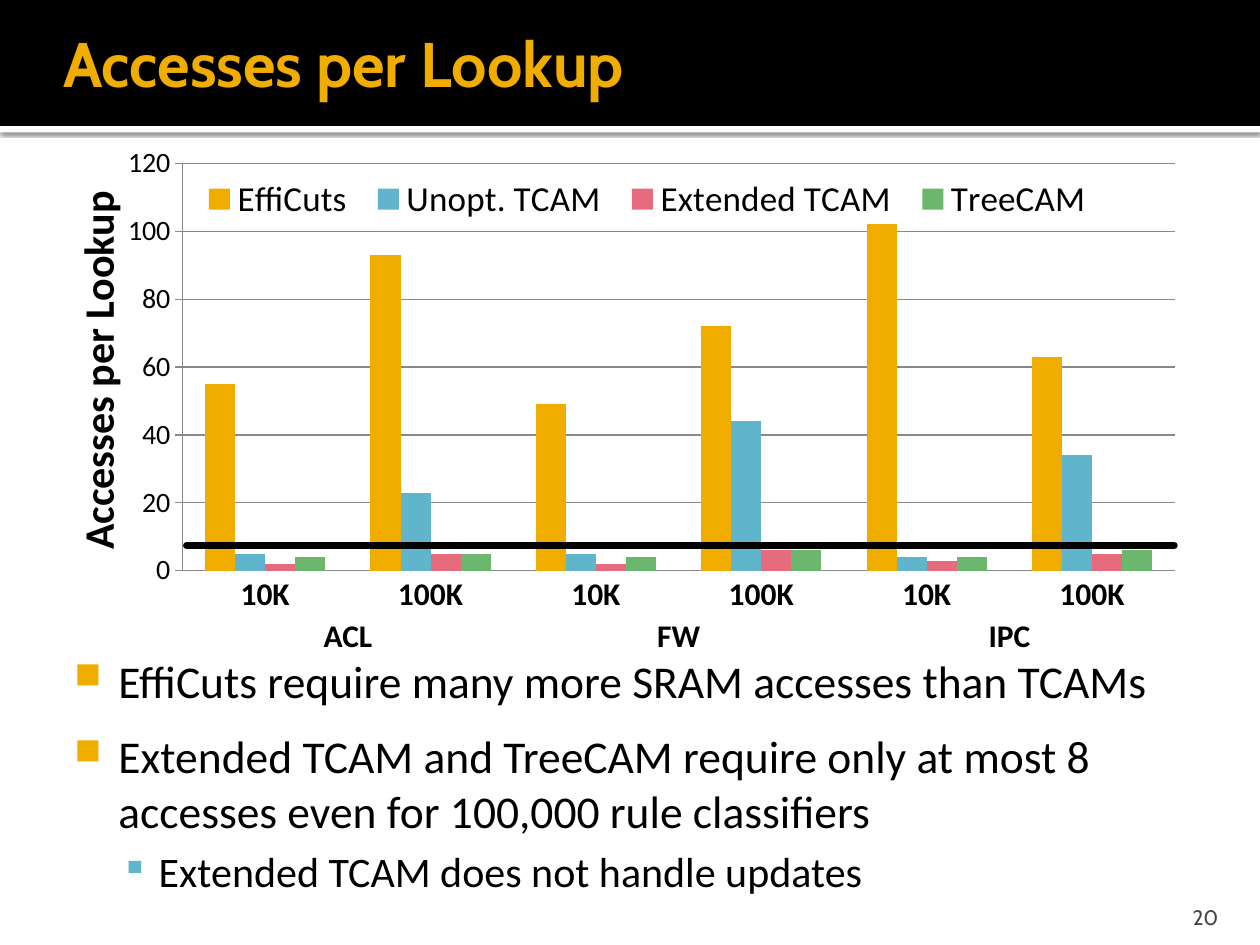
from lxml import etree
from pptx import Presentation
from pptx.chart.data import CategoryChartData
from pptx.dml.color import RGBColor
from pptx.enum import chart as ch, shapes, text
from pptx.oxml import parse_xml
from pptx.oxml.ns import nsdecls, qn
from pptx.util import Pt


def color(hex_string):
    return RGBColor.from_string(hex_string)


def place(parent, index, **layout):
    old = parent.find(qn("c:layout"))
    if old is not None:
        parent.remove(old)
    parts = "".join(f'<c:{key} val="{value}"/>' for key, value in layout.items())
    parent.insert(index, parse_xml(
        f'<c:layout {nsdecls("c")}><c:manualLayout>{parts}</c:manualLayout></c:layout>'))


prs = Presentation()
prs.slide_width, prs.slide_height = Pt(720), Pt(540)
slide = prs.slides.add_slide(prs.slide_layouts[5])

for top, height, fill in [(72, 3.6, "FFFFFF"), (0, 72, "000000")]:
    band = slide.shapes.add_shape(
        shapes.MSO_SHAPE.RECTANGLE, Pt(0), Pt(top), Pt(720), Pt(height))
    band.shadow.inherit = False
    band.fill.solid()
    band.fill.fore_color.rgb = color(fill)
    band.line.fill.background()
    if fill == "FFFFFF":
        band._element.spPr.find(qn("a:effectLst")).append(parse_xml(
            f'<a:outerShdw {nsdecls("a")} blurRad="{Pt(2.5)}" dist="{Pt(0.8)}" dir="5400000">'
            '<a:srgbClr val="000000"><a:alpha val="60000"/></a:srgbClr></a:outerShdw>'))

title = slide.shapes.title
slide.shapes._spTree.append(title._element)
title.left, title.top, title.width, title.height = Pt(28.8), Pt(5.8), Pt(667.4), Pt(59.8)
title.text_frame.text = "Accesses per Lookup"
title.text_frame.vertical_anchor = text.MSO_ANCHOR.MIDDLE
title.text_frame.margin_right = Pt(3.6)
heading = title.text_frame.paragraphs[0]
heading.alignment = text.PP_ALIGN.LEFT
heading.font.name, heading.font.size, heading.font.bold = "Cabin", Pt(36), True
heading.font.color.rgb = color("F0AD00")

accesses = CategoryChartData()
accesses.categories = ["10K", "100K"] * 3
schemes = [
    ("EffiCuts", [55, 93, 49, 72, 102, 63], "F0AD00"),
    ("Unopt. TCAM", [5, 23, 5, 44, 4, 34], "60B5CC"),
    ("Extended TCAM", [2, 5, 2, 6, 3, 5], "E66C7D"),
    ("TreeCAM", [4, 5, 4, 6, 4, 6], "6BB76D"),
]
for name, values, _ in schemes:
    accesses.add_series(name, values)
chart = slide.shapes.add_chart(
    ch.XL_CHART_TYPE.COLUMN_CLUSTERED, Pt(28.8), Pt(77.8), Pt(662.4), Pt(300), accesses).chart
chart.has_title = False
chart.font.name, chart.font.size = "Calibri", Pt(16)
chart.font.color.rgb = color("000000")
place(chart._chartSpace.chart.plotArea, 0, layoutTarget="inner", xMode="edge", yMode="edge",
      x=0.114, y=0.052, w=0.856, h=0.776)

columns = chart.plots[0]
columns.gap_width, columns.overlap, columns.vary_by_categories = 150, 0, False
for series, (_, _, fill) in zip(columns.series, schemes):
    series.format.fill.solid()
    series.format.fill.fore_color.rgb = color(fill)

sizes, counts = chart.category_axis, chart.value_axis
sizes.major_tick_mark = ch.XL_TICK_MARK.NONE
sizes.tick_labels.font.size, sizes.tick_labels.font.bold = Pt(18), True
counts.minimum_scale, counts.maximum_scale, counts.major_unit = 0, 120, 20
counts.major_tick_mark = ch.XL_TICK_MARK.CROSS
counts.tick_labels.font.size = Pt(16)
for line in (sizes.format.line, counts.format.line, counts.major_gridlines.format.line):
    line.color.rgb = color("888888")
    line.width = Pt(0.75)

counts.axis_title.text_frame.text = "Accesses per Lookup"
count_label = counts.axis_title.text_frame.paragraphs[0]
count_label.font.name, count_label.font.size, count_label.font.bold = "Calibri", Pt(24), True
count_label.font.color.rgb = color("000000")
place(counts.axis_title._element, 1, xMode="edge", yMode="edge", x=0.01, y=0.09)

chart.has_legend = True
chart.legend.position = ch.XL_LEGEND_POSITION.TOP
chart.legend.include_in_layout = False
chart.legend.font.name, chart.legend.font.size = "Calibri", Pt(20)
chart.legend.font.color.rgb = color("000000")
place(chart.legend._element, 1, xMode="edge", yMode="edge", x=0.12, y=0.07, w=0.79, h=0.1)

for group, classifier in enumerate(["ACL", "FW", "IPC"]):
    label = slide.shapes.add_textbox(Pt(168.8 + 189 * group), Pt(350), Pt(60), Pt(26)).text_frame
    label.word_wrap = True
    label.vertical_anchor = text.MSO_ANCHOR.MIDDLE
    label.text = classifier
    caption = label.paragraphs[0]
    caption.alignment = text.PP_ALIGN.CENTER
    caption.font.name, caption.font.size, caption.font.bold = "Calibri", Pt(18), True
    caption.font.color.rgb = color("000000")

limit = slide.shapes.add_connector(
    shapes.MSO_CONNECTOR.STRAIGHT, Pt(106.6), Pt(311.8), Pt(671), Pt(311.8))
limit.line.color.rgb = color("000000")
limit.line.width = Pt(4)
limit.line._ln.set("cap", "rnd")
etree.SubElement(limit._element.spPr, qn("a:effectLst"))

findings = slide.shapes.add_textbox(Pt(28.8), Pt(365.8), Pt(662.4), Pt(149.8)).text_frame
findings.word_wrap = True
findings.margin_left, findings.margin_top = Pt(4.3), Pt(7.2)
points = [
    ("EffiCuts require many more SRAM accesses than TCAMs", 0),
    ("Extended TCAM and TreeCAM require only at most 8 accesses "
     "even for 100,000 rule classifiers", 0),
    ("Extended TCAM does not handle updates", 1),
]
levels = [
    (26, 12, 34.6, -25.2, "F0AD00", 80, "■"),
    (24, 4.8, 57.6, -21.6, "60B5CC", 90, "▪"),
]
for number, (wording, level) in enumerate(points):
    size, before, margin, indent, bullet_color, bullet_size, bullet = levels[level]
    point = findings.add_paragraph() if number else findings.paragraphs[0]
    point.text, point.level = wording, level
    point.space_before = Pt(before)
    point.font.name, point.font.size = "Calibri", Pt(size)
    point.font.color.rgb = color("000000")
    props = point._p.get_or_add_pPr()
    props.set("marL", str(Pt(margin)))
    props.set("indent", str(Pt(indent)))
    marks = [
        f'<a:buClr {nsdecls("a")}><a:srgbClr val="{bullet_color}"/></a:buClr>',
        f'<a:buSzPct {nsdecls("a")} val="{bullet_size * 1000}"/>',
        f'<a:buChar {nsdecls("a")} char="{bullet}"/>',
    ]
    for mark in marks:
        props.find(qn("a:defRPr")).addprevious(parse_xml(mark))

page = slide.shapes.add_textbox(Pt(645.8), Pt(509.8), Pt(57.6), Pt(21.6)).text_frame
page.word_wrap = True
page.vertical_anchor = text.MSO_ANCHOR.BOTTOM
page.margin_bottom = Pt(0)
page.text = "20"
page_number = page.paragraphs[0]
page_number.alignment = text.PP_ALIGN.RIGHT
page_number.font.name, page_number.font.size = "Cabin", Pt(12)
page_number.font.color.rgb = color("454545")

prs.save("out.pptx")
